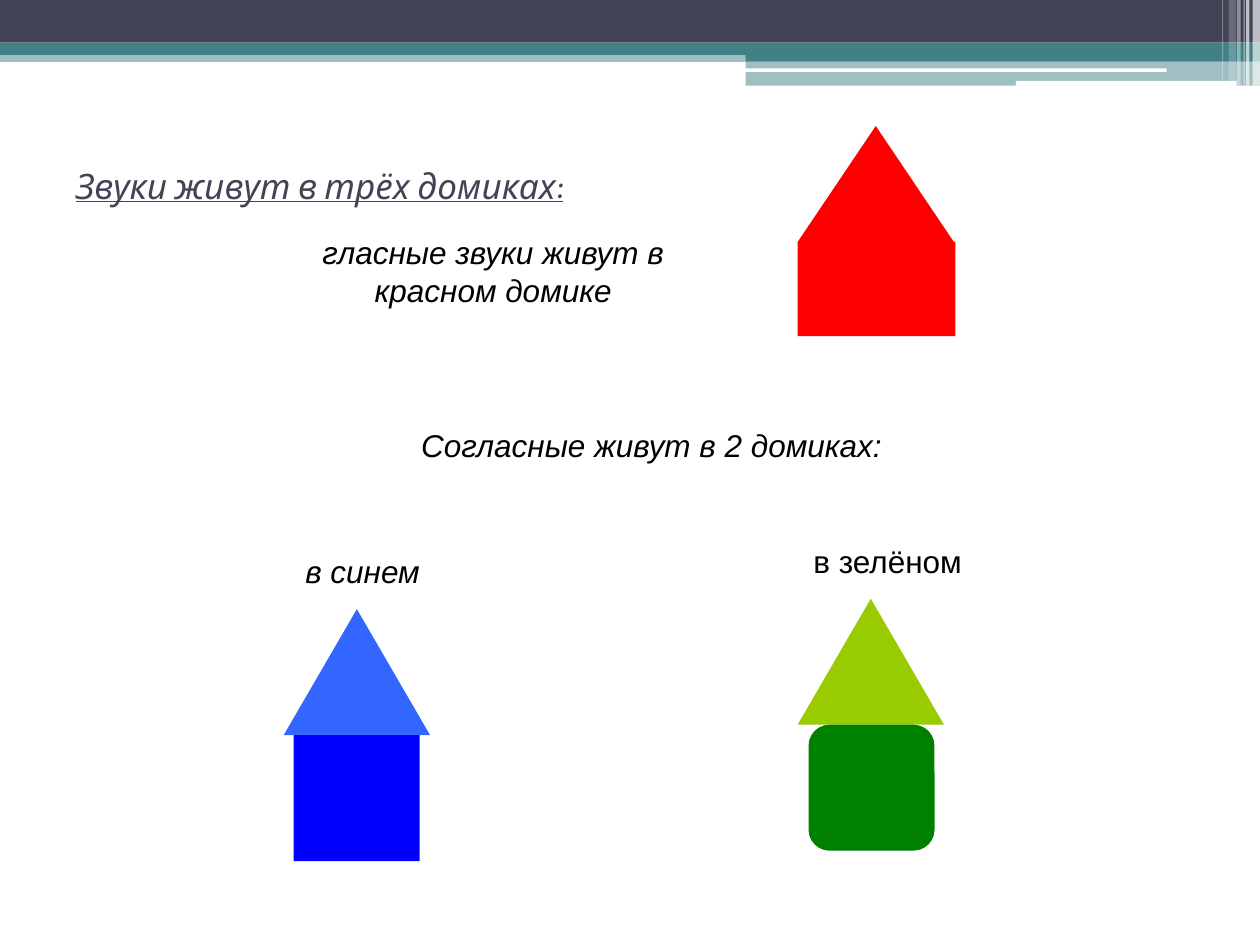
"""Build a slide about the three houses where speech sounds live."""
from lxml import etree
from pptx import Presentation
from pptx.dml.color import RGBColor
from pptx.enum.shapes import MSO_SHAPE
from pptx.enum.text import MSO_ANCHOR, PP_ALIGN
from pptx.oxml.ns import qn
from pptx.util import Cm, Pt

RECTANGLE = MSO_SHAPE.RECTANGLE
ROUNDED = MSO_SHAPE.ROUNDED_RECTANGLE
TRIANGLE = MSO_SHAPE.ISOSCELES_TRIANGLE
TOP = MSO_ANCHOR.TOP
LEFT, CENTER = PP_ALIGN.LEFT, PP_ALIGN.CENTER

SLATE = RGBColor(0x42, 0x44, 0x56)
TEAL = RGBColor(0x43, 0x80, 0x86)
WHITE = RGBColor(0xFF, 0xFF, 0xFF)
BLACK = RGBColor(0x00, 0x00, 0x00)
RED = RGBColor(0xFF, 0x00, 0x00)
SKY = RGBColor(0x33, 0x66, 0xFF)
BLUE = RGBColor(0x00, 0x00, 0xFF)
LIME = RGBColor(0x99, 0xCC, 0x00)
GREEN = RGBColor(0x00, 0x80, 0x00)

TITLE = "Звуки живут в трёх домиках:"
TITLE_BOX = (1.27, 3.18, 22.86, 2.97)

CAPTIONS = [
    ("гласные звуки живут в красном домике", (5.08, 3.81, 9.73, 4.95), 0.89, True),
    ("Согласные живут в 2 домиках:", (7.42, 8.46, 11.43, 1.02), 0.13, True),
    ("в синем", (4.45, 11, 5.72, 1.02), 0.13, True),
    ("в зелёном", (15.67, 10.8, 4.45, 1.02), 0.13, False),
]

BANDS = [
    (RECTANGLE, (0, 1.02, 25.4, 0.23), TEAL, 50),
    (RECTANGLE, (0, 0, 25.4, 0.86), SLATE, 100),
    (RECTANGLE, (0, 0.86, 25.4, 0.25), TEAL, 100),
    (RECTANGLE, (15.03, 0.98, 10.37, 0.25), TEAL, 100),
    (RECTANGLE, (15.03, 1.23, 10.37, 0.5), TEAL, 50),
    (ROUNDED, (15.01, 1.38, 8.51, 0.07), WHITE, 100),
    (ROUNDED, (20.48, 1.63, 4.45, 0.1), WHITE, 100),
]

STRIPES = [
    (25.25, 0.15, 1.73, 65),
    (25.12, 0.07, 1.73, 65),
    (25.07, 0.02, 1.73, 60),
    (24.94, 0.07, 1.73, 40),
    (24.77, 0.15, 1.63, 20),
    (24.64, 0.02, 1.63, 30),
]

HOUSES = [
    {"top": 2.54, "roof": (16.08, 3.15, 2.34, RED),
     "walls": (RECTANGLE, 16.08, 3.18, 1.9, RED)},
    {"top": 12.28, "roof": (5.72, 2.95, 2.54, SKY),
     "walls": (RECTANGLE, 5.92, 2.54, 2.54, BLUE)},
    {"top": 12.07, "roof": (16.08, 2.95, 2.54, LIME),
     "walls": (ROUNDED, 16.3, 2.54, 2.54, GREEN)},
]


def add_block(slide, kind, box, color, opacity=100):
    shape = slide.shapes.add_shape(kind, *map(Cm, box))
    shape.shadow.inherit = False
    shape.fill.solid()
    shape.fill.fore_color.rgb = color
    shape.line.fill.background()
    if opacity < 100:
        fill_color = shape.fill._xPr.find(qn("a:solidFill"))[0]
        etree.SubElement(fill_color, qn("a:alpha"), val=str(opacity * 1000))


def write_text(shape, text, *, box, size=18, font="Arial", color=BLACK, italic=True,
               underline=False, align=CENTER, inset=0.13):
    shape.left, shape.top, shape.width, shape.height = map(Cm, box)
    frame = shape.text_frame
    frame.word_wrap = True
    frame.vertical_anchor = TOP
    frame.margin_top = Cm(inset)
    paragraph = frame.paragraphs[0]
    paragraph.alignment = align
    run = paragraph.add_run()
    run.text = text
    run.font.size = Pt(size)
    run.font.name = font
    run.font.color.rgb = color
    run.font.italic = italic
    run.font.underline = underline


def add_house(slide, top, roof, walls):
    roof_left, roof_width, roof_height, roof_color = roof
    kind, left, width, height, color = walls
    add_block(slide, TRIANGLE, (roof_left, top, roof_width, roof_height), roof_color)
    add_block(slide, kind, (left, top + roof_height, width, height), color)


def main():
    presentation = Presentation()
    presentation.slide_width, presentation.slide_height = Cm(25.4), Cm(19.05)
    slide = presentation.slides.add_slide(presentation.slide_layouts[5])

    for band in BANDS:
        add_block(slide, *band)
    for left, width, height, opacity in STRIPES:
        add_block(slide, RECTANGLE, (left, 0, width, height), WHITE, opacity)

    write_text(slide.shapes.title, TITLE, box=TITLE_BOX, size=20, font="Karla",
               color=SLATE, underline=True, align=LEFT)
    for house in HOUSES:
        add_house(slide, **house)
    for text, box, inset, italic in CAPTIONS:
        text_box = slide.shapes.add_textbox(*map(Cm, box))
        write_text(text_box, text, box=box, inset=inset, italic=italic)

    presentation.save("out.pptx")


if __name__ == "__main__":
    main()
